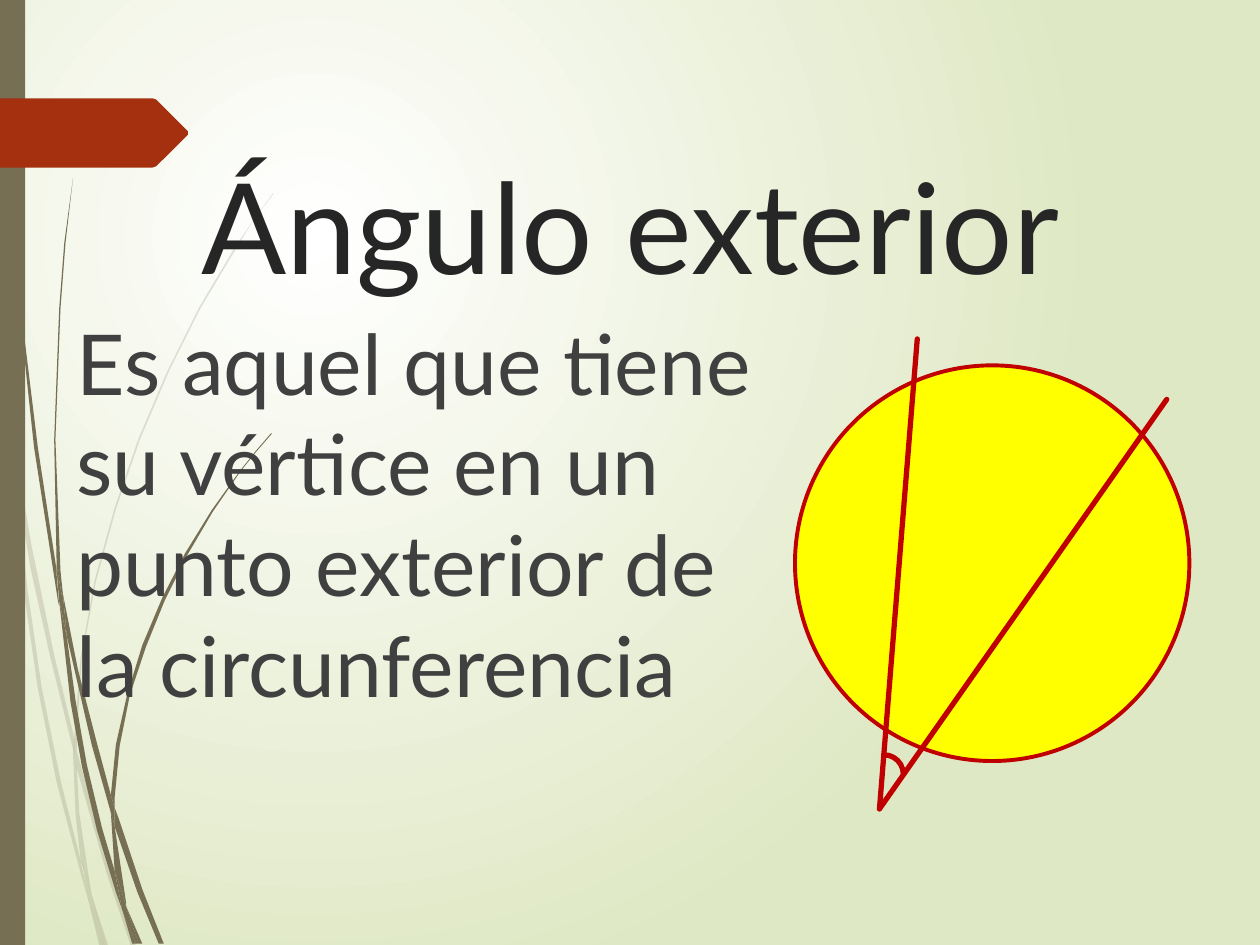
from dataclasses import dataclass

from lxml.etree import SubElement
from pptx import Presentation
from pptx.dml.color import RGBColor
from pptx.enum.shapes import MSO_CONNECTOR, MSO_SHAPE
from pptx.enum.text import MSO_ANCHOR, PP_ALIGN
from pptx.oxml.ns import qn
from pptx.util import Inches, Pt


@dataclass(frozen=True)
class Theme:
    font: str = "Lato"
    title_size: int = 72
    body_size: int = 48
    title: str = "262626"
    body: str = "404040"
    glow: str = "FFFFFF"
    ground: str = "DFE8C4"
    olive: str = "766F54"
    rust: str = "A53010"
    disc: str = "FFFF00"
    red: str = "C00000"
    circle_line: float = 2.25
    ray_line: float = 3


THEME = Theme()

# Outlines of the grass blades, in hundredths of an inch
PALE_BLADES = [
    [(8, 350), (6, 322), (0, 282), (0, 299), (7, 344)],
    [(40, 522), (59, 599), (59, 586), (43, 520), (25, 433), (10, 345), (12, 376), (24, 450)],
    [(64, 607), (61, 596), (61, 610), (85, 694), (104, 751), (108, 751), (88, 692)],
    [(83, 751), (86, 751), (73, 711)],
    [(64, 683), (48, 619), (33, 545), (22, 469), (12, 376), (8, 350), (19, 470), (30, 546),
     (45, 621), (64, 693), (70, 714), (69, 707)],
    [(58, 599), (60, 646), (64, 683), (67, 692), (73, 711), (72, 706), (63, 646), (61, 610),
     (61, 608)],
    [(61, 584), (65, 522), (76, 462), (92, 404), (111, 349), (134, 295), (159, 245), (187, 198),
     (201, 175), (217, 154), (217, 153), (201, 175), (186, 197), (158, 244), (133, 294),
     (110, 348), (91, 403), (75, 461), (64, 522), (59, 584), (59, 586), (61, 596)],
    [(70, 714), (79, 751), (82, 751)],
    [(61, 608), (61, 610), (61, 596), (59, 586), (58, 599)],
    [(67, 692), (65, 683), (69, 707), (70, 714), (82, 751), (83, 751), (73, 711)],
]
DARK_BLADES = [
    [(5, 110), (14, 233), (27, 355), (46, 477), (47, 481), (45, 457), (45, 453), (30, 355),
     (15, 232), (6, 109), (4, 48), (3, 0), (2, 0), (3, 48)],
    [(73, 592), (88, 645), (88, 633), (88, 631), (77, 590), (62, 532), (50, 472), (53, 505)],
    [(94, 649), (91, 641), (91, 656), (109, 708), (126, 749), (130, 749), (113, 706)],
    [(91, 691), (81, 657), (69, 607), (60, 556), (53, 505), (47, 477), (56, 557), (65, 608),
     (77, 659), (92, 708), (97, 722), (96, 717)],
    [(50, 472), (48, 453), (44, 349), (48, 245), (52, 193), (58, 141), (51, 193), (47, 245),
     (43, 349), (45, 449), (49, 472)],
    [(110, 749), (113, 749), (100, 719)],
    [(47, 477), (53, 505), (50, 472), (49, 472), (45, 449), (45, 453)],
    [(91, 633), (95, 592), (103, 552), (116, 513), (131, 476), (149, 440), (169, 406),
     (191, 374), (203, 359), (216, 344), (215, 344), (203, 358), (191, 373), (168, 405),
     (147, 439), (129, 474), (113, 512), (101, 551), (92, 591), (88, 631), (91, 641)],
    [(97, 722), (105, 749), (108, 749)],
    [(88, 645), (91, 691), (96, 706), (100, 719), (100, 716), (91, 656), (90, 651)],
    [(88, 645), (90, 651), (91, 656), (91, 641), (88, 631), (88, 633)],
    [(96, 706), (91, 691), (96, 717), (97, 722), (108, 749), (110, 749), (100, 719)],
]
BANNER = [(149, 107), (124, 132), (121, 133), (0, 133), (0, 78), (121, 78), (124, 79), (149, 104)]


def paint(shape, color, opacity=100):
    """Solid fill without line or shadow."""
    shape.shadow.inherit = False
    shape.fill.solid()
    shape.fill.fore_color.rgb = RGBColor.from_string(color)
    shape.line.fill.background()
    if opacity < 100:
        tone = shape.fill._xPr.find(".//" + qn("a:srgbClr"))
        SubElement(tone, qn("a:alpha"), val=str(opacity * 1000))


def draw_line(shape, width):
    shape.line.color.rgb = RGBColor.from_string(THEME.red)
    shape.line.width = Pt(width)
    shape.line._get_or_add_ln().set("cap", "rnd")


def add_outline(shapes, points, color, opacity=100):
    builder = shapes.build_freeform(*points[0], scale=Inches(0.01))
    builder.add_line_segments(points[1:], close=True)
    paint(builder.convert_to_shape(), color, opacity)


def add_blades(page, blades, opacity=100):
    group = page.shapes.add_group_shape()
    for points in blades:
        add_outline(group.shapes, points, THEME.olive, opacity)


def add_ray(shapes, start, end):
    ray = shapes.add_connector(MSO_CONNECTOR.STRAIGHT, *map(Inches, start + end))
    draw_line(ray, THEME.ray_line)
    SubElement(ray._element.spPr, qn("a:effectLst"))


def set_background(page):
    fill = page.background.fill
    fill.gradient()
    for stop, color, position in zip(fill.gradient_stops, (THEME.glow, THEME.ground), (0, 1)):
        stop.color.rgb = RGBColor.from_string(color)
        stop.position = position
    gradient = page._element.find(".//" + qn("a:gradFill"))
    gradient.remove(gradient.find(qn("a:lin")))
    radial = SubElement(gradient, qn("a:path"), path="circle")
    SubElement(radial, qn("a:fillToRect"), l="50000", t="50000", r="100000", b="100000")


def write_text(box, place, text, size, color, align):
    box.left, box.top, box.width, box.height = map(Inches, place)
    frame = box.text_frame
    frame.word_wrap = True
    frame.vertical_anchor = MSO_ANCHOR.TOP
    para = frame.paragraphs[0]
    para.alignment = align
    span = para.add_run()
    span.text = text
    span.font.name = THEME.font
    span.font.size = Pt(size)
    span.font.color.rgb = RGBColor.from_string(color)
    return para


def add_angle_figure(page):
    shapes = page.shapes.add_group_shape().shapes
    circle = shapes.add_shape(MSO_SHAPE.OVAL, *map(Inches, (6.31, 2.9, 3.13, 3.14)))
    paint(circle, THEME.disc)
    draw_line(circle, THEME.circle_line)
    vertex = (6.98, 6.42)
    for start in ((7.28, 2.69), (9.26, 3.17)):
        add_ray(shapes, start, vertex)
    arc = shapes.add_shape(MSO_SHAPE.ARC, *map(Inches, (6.86, 5.99, 0.31, 0.31)))
    arc.shadow.inherit = False
    arc.fill.background()
    draw_line(arc, THEME.ray_line)


def main():
    deck = Presentation()
    deck.slide_width, deck.slide_height = Inches(10), Inches(7.5)
    page = deck.slides.add_slide(deck.slide_layouts[5])
    set_background(page)

    # Decoration on the left
    add_blades(page, PALE_BLADES, opacity=20)
    add_blades(page, DARK_BLADES)
    strip = page.shapes.add_shape(MSO_SHAPE.RECTANGLE, 0, 0, Inches(0.2), Inches(7.5))
    paint(strip, THEME.olive)
    add_outline(page.shapes, BANNER, THEME.rust)

    # Title, brought in front of the decoration
    title = page.shapes.title
    page.shapes._spTree.append(title._element)
    write_text(title, (0, 1.13, 10, 1.45), "Ángulo exterior",
               THEME.title_size, THEME.title, PP_ALIGN.CENTER)

    # Definition
    place = (0.51, 2.42, 5.8, 4.76)
    body = page.shapes.add_textbox(*map(Inches, place))
    para = write_text(body, place,
                      "Es aquel que tiene su vértice en un punto exterior de la circunferencia",
                      THEME.body_size, THEME.body, PP_ALIGN.LEFT)
    para.space_before = Pt(10)

    # Circle with the exterior angle
    add_angle_figure(page)
    deck.save("out.pptx")


if __name__ == "__main__":
    main()
